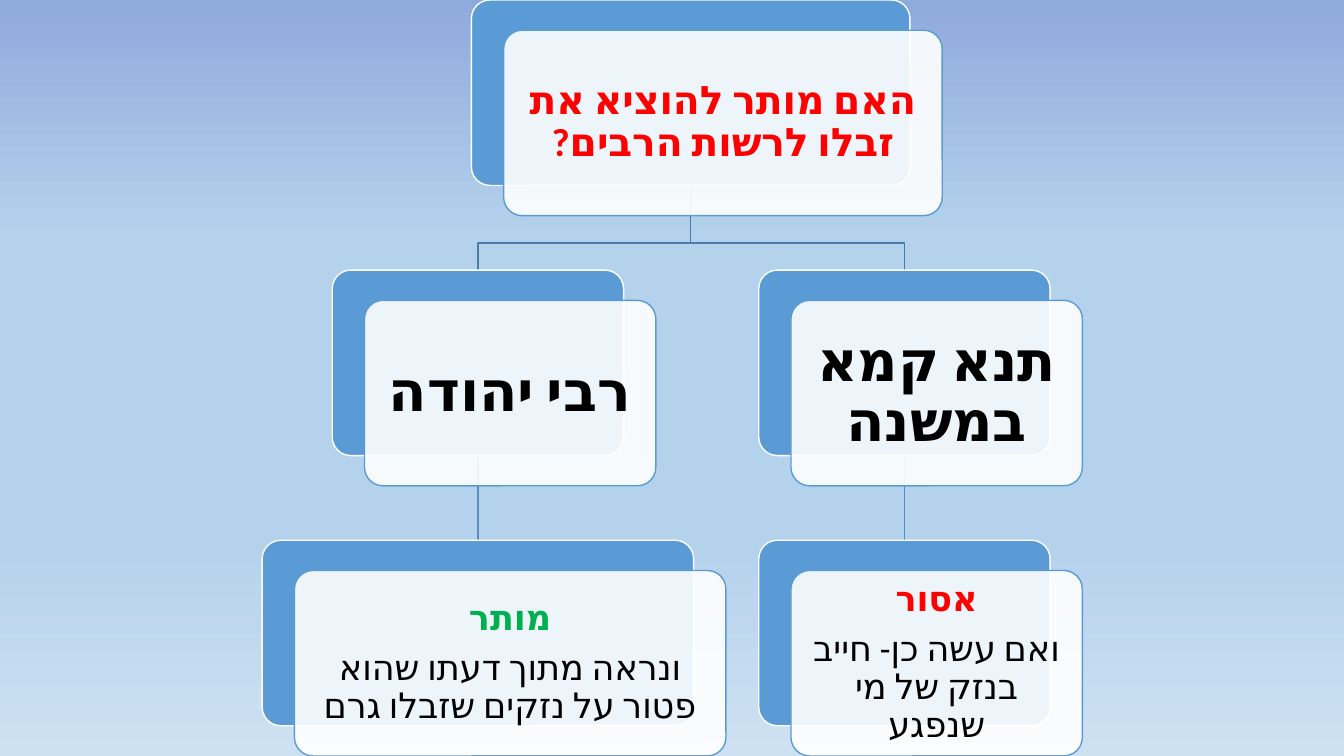
from dataclasses import dataclass
from lxml import etree
from pptx import Presentation, util as u
from pptx.dml import color
from pptx.enum import shapes as sh, text as tx
from pptx.oxml import ns


@dataclass(frozen=True)
class Theme:
    font: str = "Calibri"
    blue: str = "5B9BD5"
    white: str = "FFFFFF"
    black: str = "000000"
    red: str = "FF0000"
    green: str = "00B050"
    elbow: str = "497CAB"
    stem: str = "538DC1"
    sky: tuple = ((0, "8FAADC"), (32, "B5D2EC"), (72, "B5D2EC"), (100, "CEE1F2"))
    ask: int = 28
    name: int = 40
    body: int = 25


T = Theme()
HIGH, STEP = 1.84, 2.68      # box height, distance between levels
SHIFT = (0.32, 0.3)          # front card relative to back box
PAD = 0.06                   # text area inside the card
BEND = 2.41                  # height of the branching line
MID, LEFT, RIGHT = 6.85, 4.74, 8.97


def rgb(code):
    return color.RGBColor.from_string(code)


def sub(node, tag, **attrs):
    return etree.SubElement(node, ns.qn(tag), attrs)


def put(obj, vals):
    for key, val in vals.items():
        setattr(obj, key, val)


def sky(slide):
    """Vertical gradient background."""
    fill = slide.background.fill
    fill.gradient()
    fill.gradient_angle = 270
    stops = slide.element.find(".//" + ns.qn("a:gsLst"))
    for old in list(stops):
        stops.remove(old)
    for pos, code in T.sky:
        stop = sub(stops, "a:gs", pos=str(pos * 1000))
        sub(stop, "a:srgbClr", val=code)


def ink(shape, code):
    shape.line.color.rgb = rgb(code)
    shape.line.width = u.Pt(1)


def panel(slide, box, fill, line, alpha=None):
    """Rounded box, optionally see-through."""
    part = slide.shapes.add_shape(sh.MSO_SHAPE.ROUNDED_RECTANGLE, *map(u.Inches, box))
    part.adjustments[0] = 0.1
    part.shadow.inherit = False
    part.fill.solid()
    part.fill.fore_color.rgb = rgb(fill)
    if alpha:
        tone = part.element.spPr.find(ns.qn("a:solidFill"))[0]
        sub(tone, "a:alpha", val=str(alpha * 1000))
    ink(part, line)
    return part


def words(slide, box, inset, lines):
    """Centred right-to-left text; lines hold (text, size, colour, bold)."""
    frame = slide.shapes.add_textbox(*map(u.Inches, box)).text_frame
    put(frame, {"word_wrap": True, "vertical_anchor": tx.MSO_ANCHOR.MIDDLE})
    put(frame, {"margin_" + side: u.Inches(inset)
                for side in ("left", "top", "right", "bottom")})
    for i, (copy, size, code, bold) in enumerate(lines):
        para = frame.add_paragraph() if i else frame.paragraphs[0]
        put(para, {"alignment": tx.PP_ALIGN.CENTER, "line_spacing": 0.9,
                   "space_after": u.Pt(0)})
        # Relative spacing and reading direction
        props = para._p.get_or_add_pPr()
        props.set("rtl", "1")
        after = props.find(ns.qn("a:spcAft"))
        after.remove(after[0])
        sub(after, "a:spcPct", val="35000")
        run = para.add_run()
        run.text = copy
        put(run.font, {"name": T.font, "size": u.Pt(size), "bold": bold})
        run.font.color.rgb = rgb(code)
        mark = run._r.get_or_add_rPr()
        mark.set("lang", "he-IL")
        sub(mark, "a:cs", typeface=T.font)


def node(slide, mid, level, wide, inset, lines):
    """Back box, front card and text of one tree node."""
    x, y = mid - wide / 2, level * STEP
    back = panel(slide, (x, y, wide, HIGH), T.blue, T.white)
    x, y = x + SHIFT[0], y + SHIFT[1]
    panel(slide, (x, y, wide, HIGH), T.white, T.blue, 90)
    words(slide, (x + PAD, y + PAD, wide - 2 * PAD, HIGH - 2 * PAD), inset, lines)
    return back


def elbow(slide, mid):
    """Branch from the question down to one opinion."""
    pen = slide.shapes.build_freeform(u.Inches(MID), u.Inches(HIGH))
    spots = [(MID, BEND), (mid, BEND), (mid, STEP)]
    pen.add_line_segments([(u.Inches(x), u.Inches(y)) for x, y in spots], close=False)
    path = pen.convert_to_shape()
    path.fill.background()
    path.shadow.inherit = False
    ink(path, T.elbow)


def stem(slide, top, low):
    """Straight line between two boxes, sent behind them."""
    line = slide.shapes.add_connector(sh.MSO_CONNECTOR.STRAIGHT, 0, 0, 0, 0)
    line.begin_connect(top, 2)
    line.end_connect(low, 0)
    ink(line, T.stem)
    sub(line.element.spPr, "a:effectLst")
    slide.shapes.element.insert(2, line.element)


def tree(slide):
    """Question, two opinions and their rulings."""
    for mid in (RIGHT, LEFT):
        elbow(slide, mid)
    node(slide, MID, 0, 4.35, 0.12,
         [("האם מותר להוציא את זבלו לרשות הרבים?", T.ask, T.red, True)])
    sides = [
        (LEFT, "רבי יהודה", 4.28, "מותר", T.green,
         "ונראה מתוך דעתו שהוא פטור על נזקים שזבלו גרם"),
        (RIGHT, "תנא קמא במשנה", 2.89, "אסור", T.red,
         "ואם עשה כן- חייב בנזק של מי שנפגע"),
    ]
    for mid, name, wide, rule, tone, note in sides:
        top = node(slide, mid, 1, 2.89, 0.17, [(name, T.name, T.black, True)])
        low = node(slide, mid, 2, wide, 0.1,
                   [(rule, T.body, tone, True), (note, T.body, T.black, False)])
        stem(slide, top, low)


def main():
    deck = Presentation()
    put(deck, {"slide_width": u.Inches(13.33), "slide_height": u.Inches(7.5)})
    slide = deck.slides.add_slide(deck.slide_layouts[6])
    sky(slide)
    tree(slide)
    deck.save("out.pptx")


if __name__ == "__main__":
    main()
